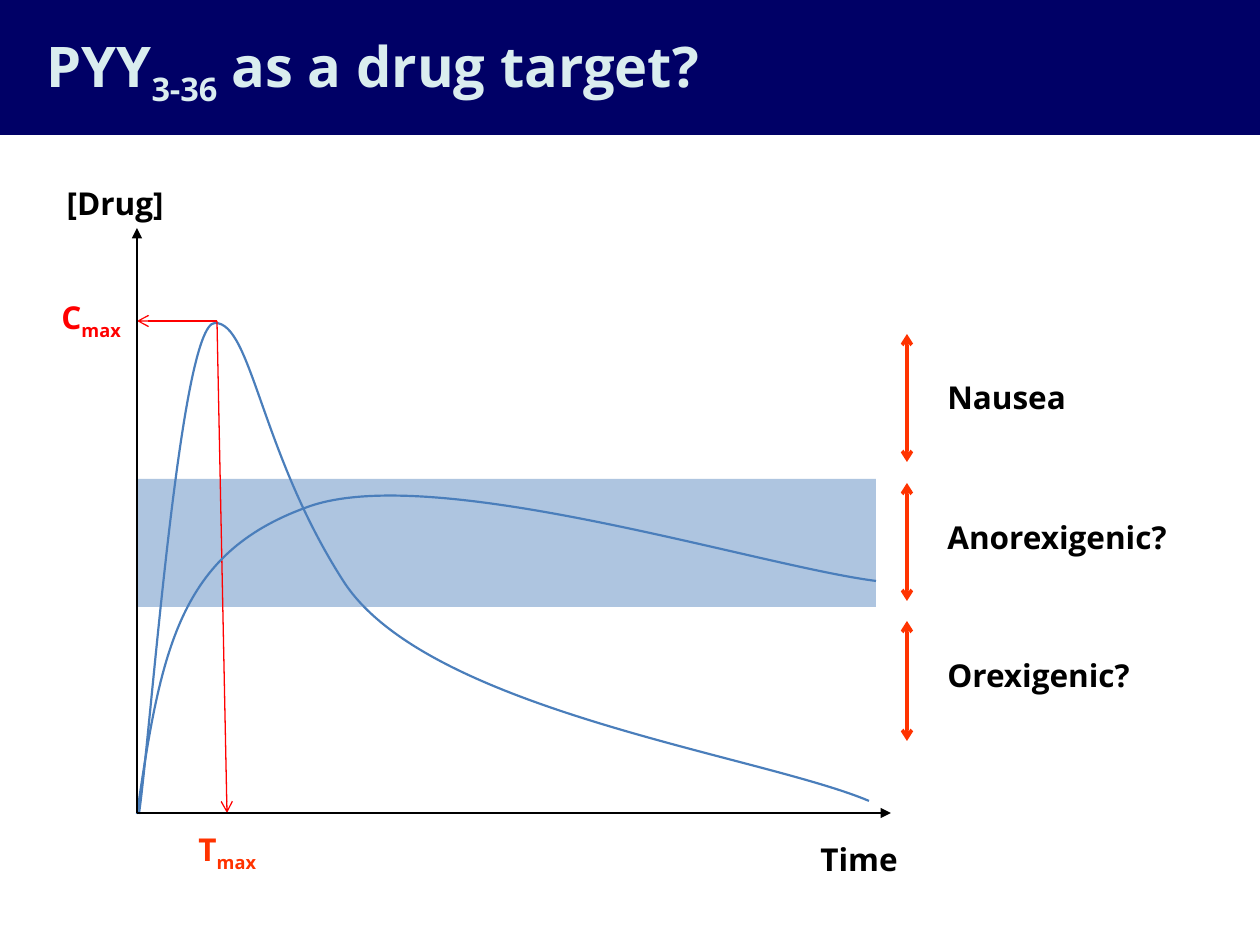
from lxml.etree import SubElement
from pptx import Presentation
from pptx.dml.color import RGBColor
from pptx.enum.shapes import MSO_CONNECTOR, MSO_SHAPE
from pptx.enum.text import MSO_AUTO_SIZE, PP_ALIGN
from pptx.oxml.ns import qn
from pptx.util import Pt

UNIT = 914400 / 126
FONT = "Open Sans"
HUES = {
    "navy": "000066", "pale": "DAEDEF", "curve": "4A7EBB", "band": "4F81BD",
    "black": "000000", "red": "FF0000", "orange": "FF3300",
}


def emu(*sizes):
    return [round(size * UNIT) for size in sizes]


def tint(hue):
    return RGBColor.from_string(HUES[hue])


def block(slide, box, hue, alpha=None):
    shape = slide.shapes.add_shape(MSO_SHAPE.RECTANGLE, *emu(*box))
    shape.shadow.inherit = False
    shape.line.fill.background()
    shape.fill.solid()
    shape.fill.fore_color.rgb = tint(hue)
    if alpha:
        color = shape.fill._xPr.find(".//" + qn("a:srgbClr"))
        SubElement(color, qn("a:alpha")).set("val", str(alpha * 1000))


def label(slide, box, parts, hue="black", size=18, wrap=True, align=PP_ALIGN.LEFT):
    frame = slide.shapes.add_textbox(*emu(*box)).text_frame
    frame.word_wrap = wrap
    frame.auto_size = MSO_AUTO_SIZE.SHAPE_TO_FIT_TEXT
    para = frame.paragraphs[0]
    para.alignment = align
    font = para.font
    font.name, font.size, font.bold = FONT, Pt(size), True
    font.color.rgb = tint(hue)
    for order, part in enumerate(parts):
        run = para.add_run()
        run.text = part
        if order == 1:
            run._r.get_or_add_rPr().set("baseline", "-25000")


def arrow(slide, start, end, hue, width, tail="arrow", head=None):
    link = slide.shapes.add_connector(MSO_CONNECTOR.STRAIGHT, *emu(*start, *end))
    link.line.color.rgb = tint(hue)
    link.line.width = Pt(width)
    line = link.line._get_or_add_ln()
    for tag, kind in (("a:headEnd", head), ("a:tailEnd", tail)):
        if kind:
            SubElement(line, qn(tag)).set("type", kind)
    SubElement(link._element.spPr, qn("a:effectLst"))


def curve(slide, left, base, points):
    spots = [(left + x, base + y) for x, y in points]
    pen = slide.shapes.build_freeform(*spots[0], scale=UNIT)
    pen.add_line_segments(spots[1:], close=False)
    shape = pen.convert_to_shape()
    shape.shadow.inherit = False
    shape.fill.background()
    shape.line.color.rgb = tint("curve")
    shape.line.width = Pt(1.25)
    route = shape._element.find(".//" + qn("a:path"))
    steps = route.findall(qn("a:lnTo"))
    for first in range(0, len(steps), 3):
        bend = SubElement(route, qn("a:cubicBezTo"))
        for step in steps[first:first + 3]:
            bend.append(step[0])
            route.remove(step)


def header(slide, x, y, w, h):
    block(slide, (x, y, w, h), "navy")
    label(slide, (x + 34, y + 25, 726, 79), ("PYY", "3-36", " as a drug target?"),
          "pale", 32, wrap=False)


def graph(slide, x, y, w, h):
    base = y + h
    peak = (x + 80, y + 93)
    curve(slide, x, base, [
        (2, 1), (14, -81), (43, -490), (78, -490), (115, -490), (123, -361),
        (207, -231), (291, -102), (623, -58), (732, -12)])
    block(slide, (x, y + 251, 739, 128), "band", 46)
    label(slide, (x + 671, base + 21, 246, 50), ["Time"])
    label(slide, (x - 98, y - 50, 137, 50), ["[Drug]"], align=PP_ALIGN.RIGHT)
    arrow(slide, peak, (x, peak[1]), "red", 0.75)
    label(slide, (x - 88, y + 64, 98, 50), ("C", "max"), "red")
    arrow(slide, peak, (x + 90, base), "red", 0.75)
    label(slide, (x + 49, base + 11, 98, 50), ("T", "max"), "orange")
    curve(slide, x, base, [
        (0, 1), (24, -165), (43, -259), (168, -305),
        (291, -353), (620, -247), (739, -232)])
    for end in ((x + w, base), (x, y)):
        arrow(slide, (x, base), end, "black", 0.75, "triangle")


def effects(slide, x, y, w):
    rows = (("Nausea", 0, 128, 38), ("Anorexigenic?", 149, 267, 178),
            ("Orexigenic?", 287, 407, 316))
    for name, top, end, text in rows:
        arrow(slide, (x, y + top), (x, y + end), "orange", 2, head="arrow")
        label(slide, (x + 28, y + text, w - 28, 50), [name])


def main():
    deck = Presentation()
    deck.slide_width, deck.slide_height = emu(1260, 945)
    slide = deck.slides.add_slide(deck.slide_layouts[6])
    header(slide, 0, 0, 1260, 135)
    graph(slide, 137, 228, 754, 585)
    effects(slide, 907, 334, 333)
    deck.save("out.pptx")


if __name__ == "__main__":
    main()
